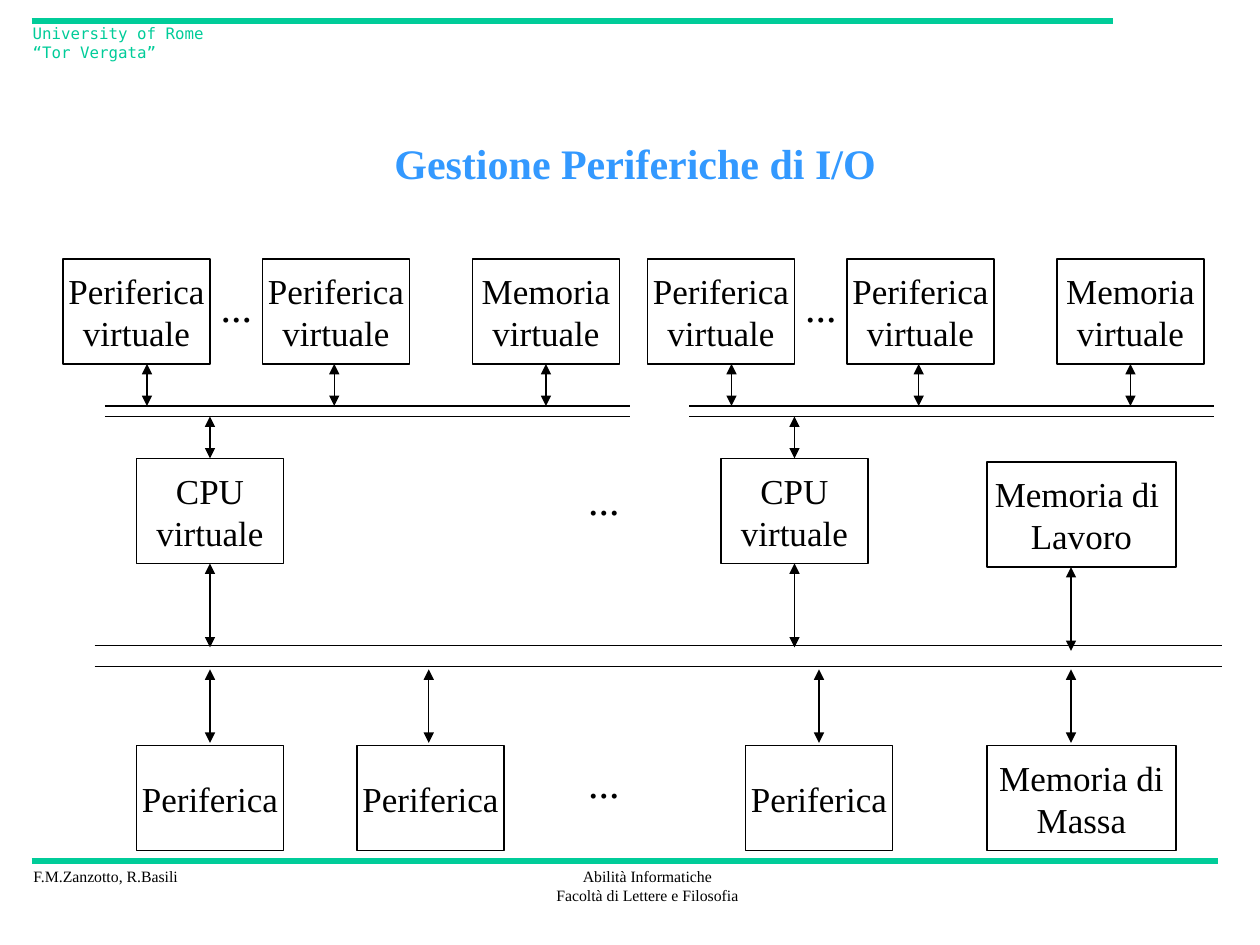
from collections import namedtuple
from dataclasses import dataclass

from lxml.etree import SubElement
from pptx import Presentation
from pptx.dml.color import RGBColor
from pptx.enum.shapes import MSO_CONNECTOR as Connector, MSO_SHAPE as Shape
from pptx.enum.text import MSO_ANCHOR as Anchor, PP_ALIGN as Align
from pptx.oxml.ns import qn
from pptx.util import Pt

Box = namedtuple("Box", "left top width height")
TOP, BOTTOM = 0, 2


@dataclass(frozen=True)
class Theme:
    ink: RGBColor = RGBColor(0, 0, 0)
    rule: RGBColor = RGBColor(0x00, 0xCC, 0x99)
    heading: RGBColor = RGBColor(0x33, 0x99, 0xFF)
    serif: str = "Times New Roman"
    mono: str = "DejaVu Sans Mono"
    small: int = 9
    label: int = 20
    large: int = 24
    thin: float = 0.75
    thick: float = 3


THEME = Theme()
BLOCK_WIDTH, BLOCK_HEIGHT = 84, 60
WIDE_BLOCK = 108


def write(frame, text, size, align=Align.LEFT, color=THEME.ink, font=THEME.serif,
          bold=False, wrap=False, anchor=Anchor.TOP):
    for name, value in {"text": text, "word_wrap": wrap, "vertical_anchor": anchor}.items():
        setattr(frame, name, value)
    font_format = {"size": Pt(size), "name": font, "bold": bold}
    for paragraph in frame.paragraphs:
        paragraph.alignment = align
        for name, value in font_format.items():
            setattr(paragraph.font, name, value)
        paragraph.font.color.rgb = color


def add_text(shapes, box, text, size, **style):
    write(shapes.add_textbox(*map(Pt, box)).text_frame, text, size, **style)


def add_ellipsis(shapes, left, top):
    add_text(shapes, Box(left, top, 32.4, 36), "...", THEME.large)


def add_block(shapes, left, top, text, width=BLOCK_WIDTH):
    block = shapes.add_shape(Shape.RECTANGLE, *map(Pt, (left, top, width, BLOCK_HEIGHT)))
    block.shadow.inherit = False
    block.fill.background()
    block.line.color.rgb = THEME.ink
    block.line.width = Pt(THEME.thin)
    write(block.text_frame, text, THEME.label, align=Align.CENTER, anchor=Anchor.MIDDLE)
    return block


def add_line(shapes, x1, y1, x2, y2, color=THEME.ink, width=THEME.thin):
    line = shapes.add_connector(Connector.STRAIGHT, *map(Pt, (x1, y1, x2, y2)))
    line.line.color.rgb = color
    line.line.width = Pt(width)
    SubElement(line._element.spPr, qn("a:effectLst"))
    return line


def add_arrow(shapes, x, top, bottom):
    """Vertical arrow with a head at both ends."""
    arrow = add_line(shapes, x, top, x, bottom)
    for end in ("a:headEnd", "a:tailEnd"):
        SubElement(arrow.line._get_or_add_ln(), qn(end), type="triangle")
    return arrow


def add_bus(shapes, left, right, *levels):
    for y in levels:
        add_line(shapes, left, y, right, y)


def add_header(shapes, box):
    add_line(shapes, box.left, box.top, box.left + box.width, box.top, THEME.rule, THEME.thick)
    add_text(shapes, Box(box.left - 6.5, box.top - 2, 123, box.height),
             "University of Rome\n“Tor Vergata”", THEME.small,
             color=THEME.rule, font=THEME.mono, wrap=True)


def add_footer(shapes, box):
    add_line(shapes, box.left, box.top, box.left + box.width, box.top, THEME.rule, THEME.thick)
    add_text(shapes, Box(box.left - 6, box.top, 98, 18), "F.M.Zanzotto, R.Basili", THEME.small)
    add_text(shapes, Box(box.left + 292.5, box.top, 118.8, box.height),
             "Abilità Informatiche\nFacoltà di Lettere e Filosofia", THEME.small,
             align=Align.CENTER)


def add_title(shapes, box):
    add_text(shapes, box, "Gestione Periferiche di I/O", THEME.large, align=Align.CENTER,
             color=THEME.heading, bold=True, wrap=True, anchor=Anchor.MIDDLE)


def add_virtual_machine(shapes, box):
    """Virtual devices and memory above a bus, with a virtual CPU below it."""
    left, top = box.left, box.top
    bus_top, bus_bottom = top + 84, top + 90
    cpu_left, cpu_top = left + 42, top + 114
    add_bus(shapes, left + 24, left + box.width, bus_top, bus_bottom)

    for x, arrow_x, name in ((0, 48, "Periferica"), (114, 155, "Periferica"),
                             (234, 276, "Memoria")):
        block = add_block(shapes, left + x, top, f"{name}\nvirtuale")
        arrow = add_arrow(shapes, left + arrow_x, top + BLOCK_HEIGHT, bus_top)
        if arrow_x == x + BLOCK_WIDTH / 2:
            arrow.begin_connect(block, BOTTOM)
    add_ellipsis(shapes, left + 83, top + 9)

    cpu = add_block(shapes, cpu_left, cpu_top, "CPU\nvirtuale")
    cpu_x = cpu_left + BLOCK_WIDTH / 2
    add_arrow(shapes, cpu_x, bus_bottom, cpu_top).end_connect(cpu, TOP)
    add_arrow(shapes, cpu_x, cpu_top + BLOCK_HEIGHT, top + box.height).begin_connect(cpu, BOTTOM)


def add_physical_machine(shapes, box):
    """Working memory above the shared bus, with devices and mass storage below it."""
    left, top = box.left, box.top
    bus_top, bus_bottom = top + 105, top + 117
    device_top = top + box.height - BLOCK_HEIGHT
    memory_left, memory_x = left + 510, left + 558
    add_bus(shapes, left, left + box.width, bus_top, bus_bottom)

    add_block(shapes, memory_left, top, "Memoria di \nLavoro", WIDE_BLOCK)
    add_arrow(shapes, memory_x, top + BLOCK_HEIGHT, bus_top + 3)

    for x in (24, 150, 372):
        add_block(shapes, left + x, device_top, "Periferica")
    add_block(shapes, memory_left, device_top, "Memoria di\nMassa", WIDE_BLOCK)
    for x in (left + 66, left + 191, left + 414, memory_x):
        add_arrow(shapes, x, bus_bottom + 1.5, device_top - 1.5)
    add_ellipsis(shapes, left + 275, device_top + 3)


def main():
    deck = Presentation()
    deck.slide_width, deck.slide_height = Pt(720), Pt(540)
    shapes = deck.slides.add_slide(deck.slide_layouts[6]).shapes

    add_footer(shapes, Box(18, 492, 678, 29))
    add_header(shapes, Box(18, 12, 618, 30))
    add_title(shapes, Box(39, 48, 648, 90))
    add_physical_machine(shapes.add_group_shape().shapes, Box(54, 264, 644.5, 222))
    for left in (36, 370):
        add_virtual_machine(shapes.add_group_shape().shapes, Box(left, 148, 324, 222))
    add_ellipsis(shapes, 329, 267)

    deck.save("out.pptx")


if __name__ == "__main__":
    main()
